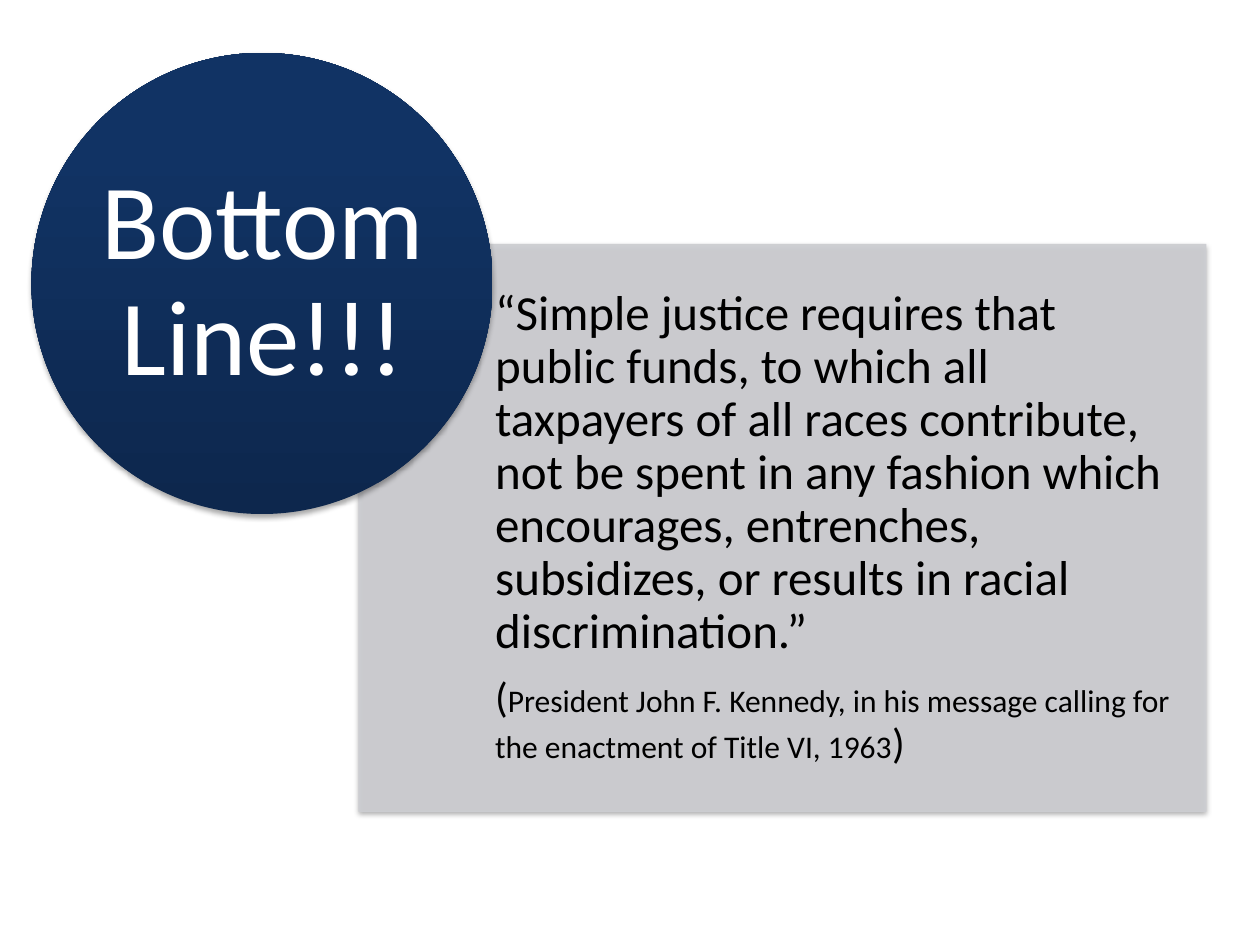
"""Build the "Bottom Line" slide: a quotation panel overlapped by a title disc."""
from lxml.etree import SubElement
from pptx import Presentation
from pptx.dml.color import RGBColor
from pptx.enum.shapes import MSO_SHAPE as Shape
from pptx.enum.text import MSO_ANCHOR as Anchor, MSO_AUTO_SIZE as AutoSize, PP_ALIGN as Align
from pptx.oxml.ns import qn
from pptx.util import Inches, Pt


def color(hex_code):
    return RGBColor.from_string(hex_code)


def add_node(parent, tag, **attributes):
    return SubElement(parent, qn(tag), {key: str(value) for key, value in attributes.items()})


prs = Presentation()
prs.slide_width, prs.slide_height = Inches(10), Inches(7.5)
slide = prs.slides.add_slide(prs.slide_layouts[1])
shapes = slide.shapes
title, quote = shapes.title, slide.placeholders[1]

panel = shapes.add_shape(Shape.RECTANGLE, Inches(2.85), Inches(1.94), Inches(6.72), Inches(4.5))
panel.fill.solid()
panel.line.fill.solid()
panel.line.width = Pt(0.75)
for paint in (panel.fill, panel.line.fill):
    paint.fore_color.rgb = color("CDCED2")
for tint in panel._element.spPr.iter(qn("a:srgbClr")):
    add_node(tint, "a:alpha", val=90000)

disc = shapes.add_shape(Shape.OVAL, Inches(0.25), Inches(0.42), Inches(3.66), Inches(3.66))
disc.line.fill.background()
disc.fill.gradient()
gradient = disc._element.spPr.find(qn("a:gradFill"))
for part in list(gradient):
    gradient.remove(part)
stops = add_node(gradient, "a:gsLst")
for position, shade in ((0, "0D274D"), (80, "113364"), (100, "0F3366")):
    add_node(add_node(stops, "a:gs", pos=position * 1000), "a:srgbClr", val=shade)
add_node(gradient, "a:lin", ang=270 * 60000, scaled=0)

for backdrop in (panel, disc):
    backdrop.shadow.inherit = False
    effects = backdrop._element.spPr.find(qn("a:effectLst"))
    shadow = add_node(effects, "a:outerShdw", blurRad=Pt(3.1), dist=Pt(1.8),
                      dir=90 * 60000, rotWithShape=0)
    add_node(add_node(shadow, "a:srgbClr", val="000000"), "a:alpha", val=35000)

for holder, left, top, width, height, inset in (
    (quote, 3.93, 1.94, 5.64, 4.5, 0.22),
    (title, 0.79, 0.95, 2.59, 2.59, 0),
):
    holder.left, holder.top = Inches(left), Inches(top)
    holder.width, holder.height = Inches(width), Inches(height)
    frame = holder.text_frame
    frame.word_wrap = True
    frame.auto_size = AutoSize.NONE
    frame.vertical_anchor = Anchor.MIDDLE
    frame.margin_left = 0
    frame.margin_top = frame.margin_right = frame.margin_bottom = Inches(inset)

title.text_frame.text = "Bottom Line!!!"
quote.text_frame.text = (
    "“Simple justice requires that public funds, to which all taxpayers of all races "
    "contribute, not be spent in any fashion which encourages, entrenches, subsidizes, "
    "or results in racial discrimination.”"
)
heading, statement = title.text_frame.paragraphs[0], quote.text_frame.paragraphs[0]
source = quote.text_frame.add_paragraph()
for words, size in (
    ("(", 24),
    ("President John F. Kennedy, in his message calling for the enactment of Title VI, 1963", 18),
    (")", 24),
):
    run = source.add_run()
    run.text = words
    run.font.size = Pt(size)

for paragraph in (statement, source):
    properties = paragraph._p.get_or_add_pPr()
    properties.set("marL", "0")
    properties.set("indent", "0")
    add_node(properties, "a:buNone")

for paragraph, ink, align, after in (
    (heading, "FFFFFF", Align.CENTER, 0),
    (statement, "000000", Align.LEFT, 10),
    (source, "000000", Align.LEFT, 8),
):
    paragraph.alignment = align
    paragraph.line_spacing = 0.9
    paragraph.space_before = Pt(0)
    paragraph.space_after = Pt(after)
    paragraph.font.name = "Calibri"
    paragraph.font.color.rgb = color(ink)
heading.font.size = Pt(61)
statement.font.size = Pt(28)

panel._element.addnext(quote._element)
disc._element.addnext(title._element)

prs.save("out.pptx")
